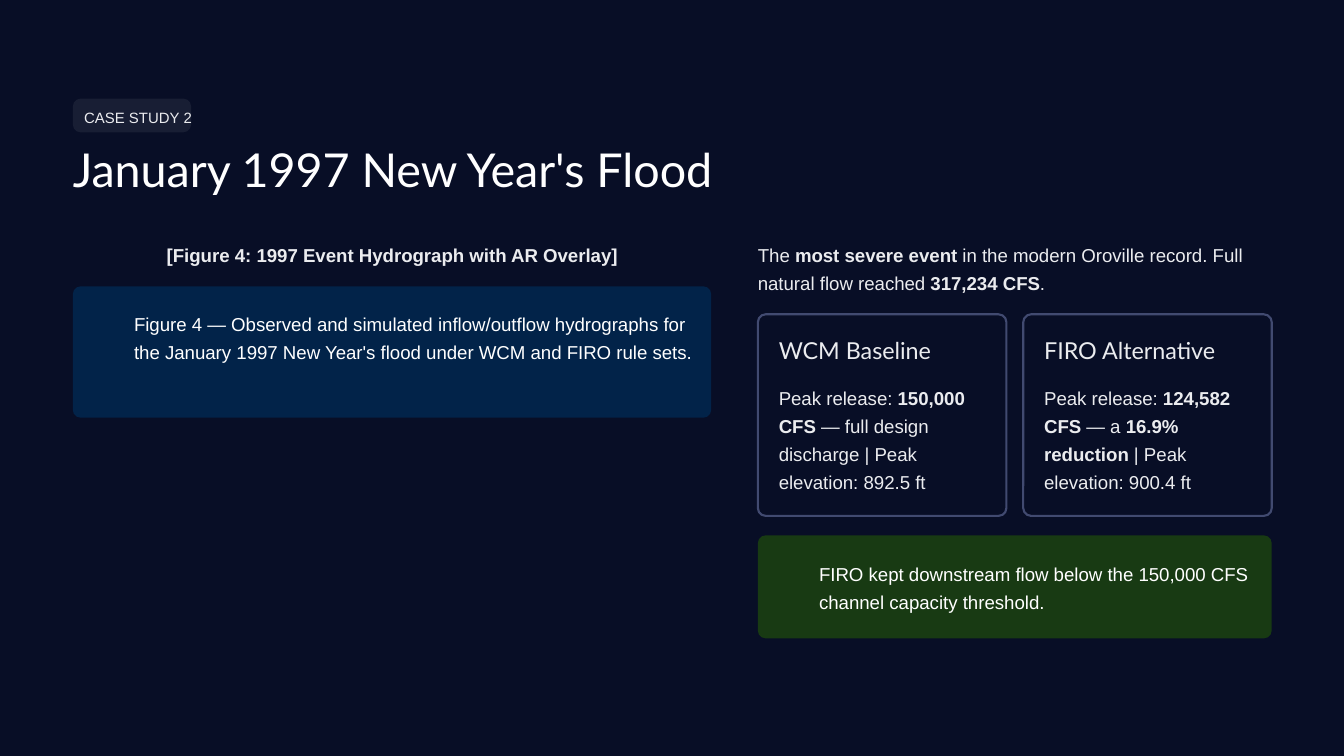
from pptx import Presentation
from pptx.dml.color import RGBColor
from pptx.enum.shapes import MSO_SHAPE
from pptx.enum.text import MSO_ANCHOR, PP_ALIGN
from pptx.util import Pt

NAVY, MIST, WHITE = "080E26", "EBECEF", "FFFFFF"
CORNER = 4.25


def set_color(target, value):
    target.rgb = RGBColor.from_string(value)


def format_text(box, text, size, color, font="Arial", spacing=15, wrap=True,
                align=PP_ALIGN.LEFT):
    """Write text into the box; parts between ** marks become bold."""
    frame = box.text_frame
    frame.margin_left = frame.margin_top = frame.margin_right = frame.margin_bottom = 0
    frame.vertical_anchor = MSO_ANCHOR.TOP
    frame.word_wrap = wrap
    para = frame.paragraphs[0]
    para.alignment = align
    para.line_spacing = Pt(spacing)
    para.space_before = Pt(0)
    for index, part in enumerate(text.split("**")):
        if part:
            span = para.add_run()
            span.text = part
            span.font.name = font
            span.font.size = Pt(size)
            span.font.bold = index % 2 == 1
            set_color(span.font.color, color)


def add_text(page, left, top, width, height, text, size=10, color=MIST, **style):
    box = page.shapes.add_textbox(Pt(left), Pt(top), Pt(width), Pt(height))
    format_text(box, text, size, color, **style)


def add_panel(page, left, top, width, height, fill, line=None):
    panel = page.shapes.add_shape(MSO_SHAPE.ROUNDED_RECTANGLE,
                                  Pt(left), Pt(top), Pt(width), Pt(height))
    panel.adjustments[0] = CORNER / min(width, height)
    panel.shadow.inherit = False
    panel.fill.solid()
    set_color(panel.fill.fore_color, fill)
    if line:
        set_color(panel.line.color, line)
        panel.line.width = Pt(1.13)
    else:
        panel.line.fill.background()


def add_heading(page, left, top, width, tag, title):
    tag_width, tag_height = 63.4, 18.1
    add_panel(page, left, top, tag_width, tag_height, "181E34")
    add_text(page, left + 6, top + 3.2, 60, 12, tag, size=8, spacing=12)
    box = page.shapes.title
    box.left, box.top, box.width, box.height = Pt(left), Pt(top + 21.7), Pt(width), Pt(32)
    format_text(box, title, 25, WHITE, font="Lato", spacing=31, wrap=False)


def add_callout(page, left, top, width, height, fill, text):
    add_panel(page, left, top, width, height, fill)
    add_text(page, left + 32.8, top + 11.5, width - 42.4, height - 25, text, color=WHITE)


def add_card(page, left, top, width, height, heading, body):
    pad = 11.2
    add_panel(page, left, top, width, height, NAVY, line="414A70")
    add_text(page, left + pad, top + pad, width - 2 * pad, 16, heading, size=12.5,
             font="Lato", spacing=15.5, wrap=False)
    add_text(page, left + pad, top + 36, width - 2 * pad, 61, body)


def add_figure_column(page, left, top, width):
    add_text(page, left, top, width, 15,
             "**[Figure 4: 1997 Event Hydrograph with AR Overlay]**",
             wrap=False, align=PP_ALIGN.CENTER)
    add_callout(page, left, top + 26, width, 70.4, "022349",
                "Figure 4 — Observed and simulated inflow/outflow hydrographs for "
                "the January 1997 New Year's flood under WCM and FIRO rule sets.")


def add_findings_column(page, left, top, width):
    add_text(page, left, top + 0.3, width, 30,
             "The **most severe event** in the modern Oroville record. Full "
             "natural flow reached **317,234 CFS**.")
    cards = [
        ("WCM Baseline",
         "Peak release: **150,000 CFS** — full design discharge | "
         "Peak elevation: 892.5 ft"),
        ("FIRO Alternative",
         "Peak release: **124,582 CFS** — a **16.9% reduction** | "
         "Peak elevation: 900.4 ft"),
    ]
    gap = 9
    card_width = (width - gap) / 2
    for index, (heading, body) in enumerate(cards):
        add_card(page, left + index * (card_width + gap), top + 41, card_width, 108,
                 heading, body)
    add_callout(page, left, top + 159.4, width, 55.2, "183A13",
                "FIRO kept downstream flow below the 150,000 CFS "
                "channel capacity threshold.")


def main():
    deck = Presentation()
    deck.slide_width, deck.slide_height = Pt(720), Pt(405)
    page = deck.slides.add_slide(deck.slide_layouts[5])
    page.background.fill.solid()
    set_color(page.background.fill.fore_color, NAVY)
    add_heading(page, 39, 52.8, 366.5, "CASE STUDY 2", "January 1997 New Year's Flood")
    add_figure_column(page, 39, 127.4, 342)
    add_findings_column(page, 406, 127.4, 275.3)
    deck.save("out.pptx")


if __name__ == "__main__":
    main()
